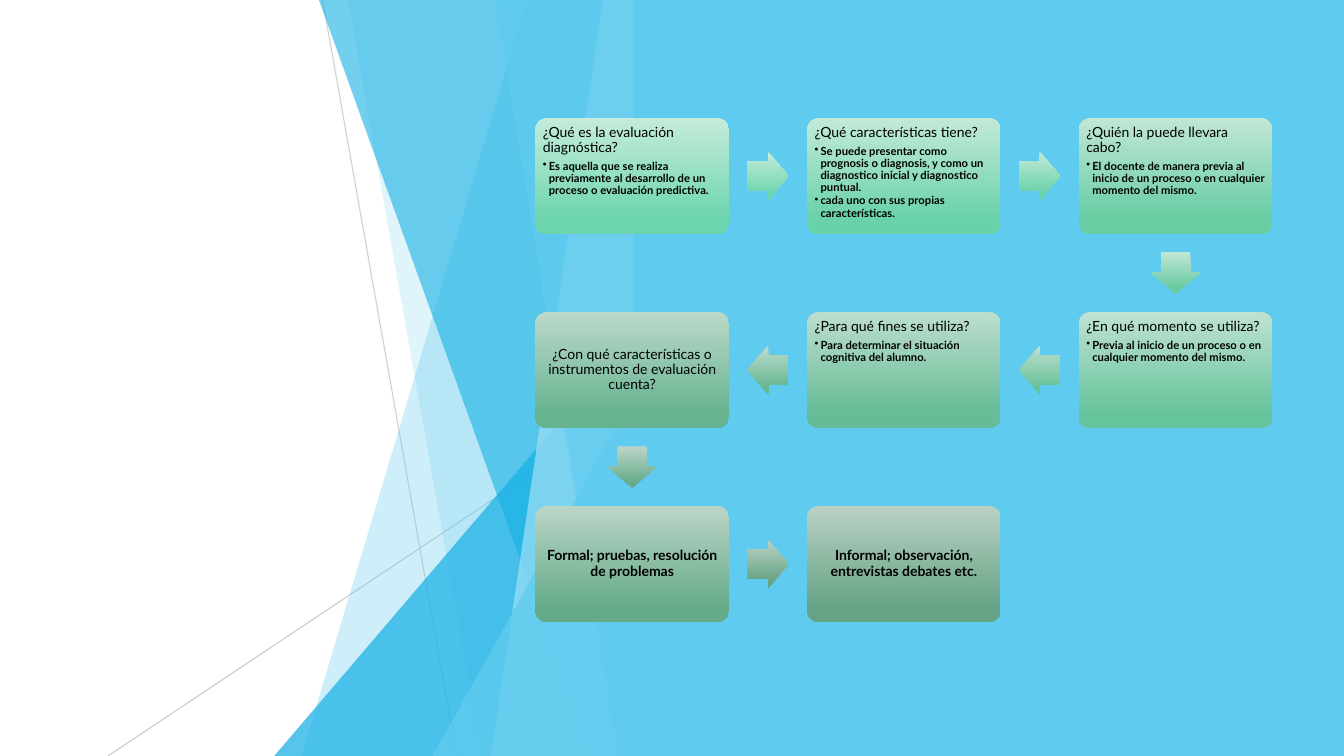
import math
from itertools import pairwise

from lxml import etree
from pptx import Presentation
from pptx import util as u
from pptx.dml.color import RGBColor
from pptx.enum import shapes, text
from pptx.oxml.ns import qn

BLACK = RGBColor(0x00, 0x00, 0x00)
GREY = RGBColor(0xBF, 0xBF, 0xBF)
SKY = RGBColor(0x5F, 0xCB, 0xEF)
BLUE = RGBColor(0x17, 0xB0, 0xE4)
PALE = RGBColor(0x9F, 0xE0, 0xF5)

WIDTH, HEIGHT, EDGE = 13.33, 7.5, 6.28
CARD_WIDTH, CARD_HEIGHT = 1.92, 1.15
FIRST_LEFT, FIRST_TOP = 5.31, 1.17
COLUMN_STEP, ROW_STEP = 2.695, 1.925
ARROW_WIDTH, ARROW_HEIGHT = 0.41, 0.48

RAYS = [
    ("band", 5.23, 2.99, SKY, 30),
    ("band", 3.45, 4.78, SKY, 20),
    ("triangle", 2.72, 3.33, BLUE, 72),
    ("band", 3.16, 5.86, BLUE, 60),
    ("band", 5.98, 4.87, PALE, 70),
    ("band", 4.91, 6.13, SKY, 65),
    ("triangle", 4.29, 3.93, SKY, 80),
]

STEPS = [
    (0, 0, "C5ECDB", "6DD5AE", "¿Qué es la evaluación diagnóstica?",
     ["Es aquella que se realiza previamente al desarrollo de un proceso o evaluación predictiva."]),
    (1, 0, "C3EAD8", "69D2A9", "¿Qué características tiene?",
     ["Se puede presentar como prognosis o diagnosis, y como un diagnostico inicial y diagnostico puntual.",
      "cada uno con sus propias características."]),
    (2, 0, "C1E7D5", "67CDA3", "¿Quién la puede llevara cabo?",
     ["El docente de manera previa al inicio de un proceso o en cualquier momento del mismo."]),
    (2, 1, "BFE2D1", "66C49C", "¿En qué momento se utiliza?",
     ["Previa al inicio de un proceso o en cualquier momento del mismo."]),
    (1, 1, "BDDECE", "66BC96", "¿Para qué fines se utiliza?",
     ["Para determinar el situación cognitiva del alumno."]),
    (0, 1, "BCD9CA", "66B390", "¿Con qué características o instrumentos de evaluación cuenta?", []),
    (0, 2, "BBD5C7", "65AB8A", "Formal; pruebas, resolución de problemas", []),
    (1, 2, "BAD1C4", "65A385", "Informal; observación, entrevistas debates etc.", []),
]

ARROW_COLOURS = [
    ("C5ECDB", "6DD5AE"), ("C2EAD8", "69D2A8"), ("C0E6D4", "67CAA1"), ("BEE0CF", "66C099"),
    ("BCDBCB", "66B692"), ("BBD6C8", "65AC8B"), ("BAD1C4", "65A385"),
]


def apply(target, **values):
    """Set each named attribute on the target."""
    for name, value in values.items():
        setattr(target, name, value)


def centre(column, row):
    """Return the centre of the card in a grid cell."""
    return (FIRST_LEFT + column * COLUMN_STEP + CARD_WIDTH / 2,
            FIRST_TOP + row * ROW_STEP + CARD_HEIGHT / 2)


class Page:
    """Hold the style and the current slide, and draw its elements."""

    def __init__(self, deck):
        """Add a blank slide to the deck."""
        self.slide = deck.slides.add_slide(deck.slide_layouts[6])
        self.font = "Lato"
        self.title = {"size": u.Pt(10), "bold": False}
        self.strong = {"size": u.Pt(10), "bold": True}
        self.detail = {"size": u.Pt(8), "bold": True}

    def fade(self, holder, opacity):
        """Make the solid colour inside an element partly transparent."""
        colour = next(holder.iter(qn("a:srgbClr")))
        etree.SubElement(colour, qn("a:alpha")).set("val", str(opacity * 1000))

    def paint(self, box, colour, opacity=100):
        """Give a shape a flat fill without line or shadow."""
        box.shadow.inherit = False
        box.line.fill.background()
        box.fill.solid()
        box.fill.fore_color.rgb = colour
        if opacity < 100:
            self.fade(box.fill._xPr, opacity)

    def blend(self, box, light, dark):
        """Give a shape an upright gradient that ignores rotation."""
        box.shadow.inherit = False
        box.line.fill.background()
        box.fill.gradient()
        box.fill.gradient_angle = 270
        for stop, position, colour in zip(box.fill.gradient_stops, (0, 0.88), (light, dark)):
            stop.position = position
            stop.color.rgb = RGBColor.from_string(colour)
        box.fill._xPr.find(qn("a:gradFill")).set("rotWithShape", "0")

    def shape(self, kind, left, top, width, height, *adjustments):
        """Add a preset shape."""
        box = self.slide.shapes.add_shape(kind, *map(u.Inches, (left, top, width, height)))
        for index, value in enumerate(adjustments):
            box.adjustments[index] = value
        return box

    def line(self, start, end, opacity):
        """Add a thin translucent line."""
        line = self.slide.shapes.add_connector(
            shapes.MSO_CONNECTOR.STRAIGHT, *map(u.Inches, (*start, *end)))
        apply(line.line, width=u.Pt(0.75))
        line.line.color.rgb = GREY
        properties = line._element.spPr
        self.fade(properties, opacity)
        etree.SubElement(properties, qn("a:effectLst"))

    def band(self, top_left, bottom_left, colour, opacity):
        """Add a slanted band that reaches the panel's edge."""
        corners = [(top_left, -0.01), (EDGE, -0.01), (EDGE, HEIGHT), (bottom_left, HEIGHT)]
        points = [(u.Inches(x), u.Inches(y)) for x, y in corners]
        builder = self.slide.shapes.build_freeform(*points[0])
        builder.add_line_segments(points[1:], close=True)
        self.paint(builder.convert_to_shape(), colour, opacity)

    def triangle(self, left, top, colour, opacity):
        """Add a triangle with its tip at the panel's edge."""
        box = self.shape(shapes.MSO_SHAPE.ISOSCELES_TRIANGLE,
                         left, top, EDGE - left, HEIGHT - top, 1)
        self.paint(box, colour, opacity)

    def panel(self):
        """Add the solid panel on the right."""
        self.paint(self.shape(shapes.MSO_SHAPE.RECTANGLE, EDGE, 0, WIDTH - EDGE, HEIGHT), SKY)

    def paragraph(self, para, words, style, align, after):
        """Write one paragraph in the given style."""
        apply(para, alignment=align, line_spacing=0.9, space_after=u.Pt(after))
        span = para.add_run()
        span.text = words
        apply(span.font, name=self.font, **style)
        span.font.color.rgb = BLACK

    def bullet(self, frame, words):
        """Add a bulleted paragraph."""
        para = frame.add_paragraph()
        para.level = 1
        self.paragraph(para, words, self.detail, text.PP_ALIGN.LEFT, 1.2)
        properties = para._p.get_or_add_pPr()
        properties.set("marL", str(u.Inches(0.06)))
        properties.set("indent", str(u.Inches(-0.06)))
        etree.SubElement(properties, qn("a:buChar")).set("char", "•")

    def card(self, column, row, light, dark, title, details):
        """Add a step card with its title and bullets."""
        x, y = centre(column, row)
        box = self.shape(shapes.MSO_SHAPE.ROUNDED_RECTANGLE, x - CARD_WIDTH / 2,
                         y - CARD_HEIGHT / 2, CARD_WIDTH, CARD_HEIGHT, 0.1)
        self.blend(box, light, dark)
        frame = box.text_frame
        inset = u.Inches(0.04)
        anchor = text.MSO_ANCHOR.TOP if details else text.MSO_ANCHOR.MIDDLE
        apply(frame, word_wrap=True, vertical_anchor=anchor, margin_left=inset,
              margin_right=inset, margin_top=inset, margin_bottom=inset)
        align = text.PP_ALIGN.LEFT if details else text.PP_ALIGN.CENTER
        style = self.strong if row == 2 else self.title
        self.paragraph(frame.paragraphs[0], title, style, align, 3.5)
        for words in details:
            self.bullet(frame, words)

    def arrow(self, start, end, light, dark):
        """Add a block arrow halfway between two grid cells."""
        (x1, y1), (x2, y2) = centre(*start), centre(*end)
        box = self.shape(shapes.MSO_SHAPE.RIGHT_ARROW, (x1 + x2 - ARROW_WIDTH) / 2,
                         (y1 + y2 - ARROW_HEIGHT) / 2, ARROW_WIDTH, ARROW_HEIGHT, 0.6, 0.5)
        box.rotation = math.degrees(math.atan2(y2 - y1, x2 - x1))
        self.blend(box, light, dark)


def main():
    """Build the slide and save it."""
    deck = Presentation()
    apply(deck, slide_width=u.Inches(WIDTH), slide_height=u.Inches(HEIGHT))
    page = Page(deck)
    page.line((3.2, 0), (4.53, HEIGHT), 75)
    page.line((EDGE, 4.03), (1.07, HEIGHT), 80)
    for kind, *values in RAYS:
        draw = page.band if kind == "band" else page.triangle
        draw(*values)
    page.panel()
    for step in STEPS:
        page.card(*step)
    for (start, end), colours in zip(pairwise(STEPS), ARROW_COLOURS):
        page.arrow(start[:2], end[:2], *colours)
    deck.save("out.pptx")


if __name__ == "__main__":
    main()
